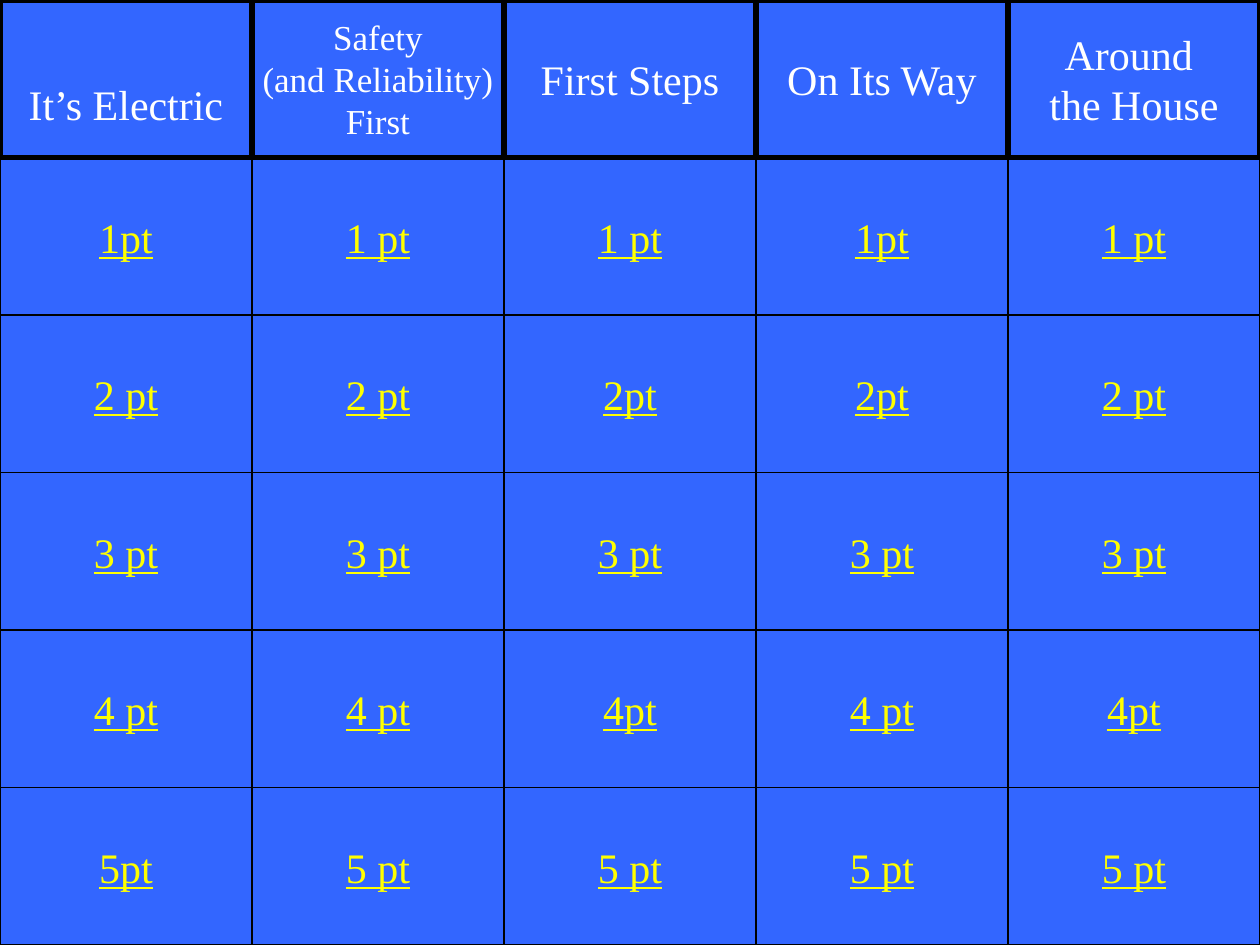
from pptx import Presentation
from pptx.dml.color import RGBColor
from pptx.enum.shapes import MSO_SHAPE
from pptx.enum.text import MSO_ANCHOR, PP_ALIGN
from pptx.util import Cm, Pt

BLUE = RGBColor(0x33, 0x66, 0xFF)
BLACK = RGBColor(0, 0, 0)
WHITE = RGBColor(0xFF, 0xFF, 0xFF)
YELLOW = RGBColor(0xFF, 0xFF, 0)
RECTANGLE = MSO_SHAPE.RECTANGLE
BUTTON = MSO_SHAPE.ACTION_BUTTON_CUSTOM
MIDDLE = MSO_ANCHOR.MIDDLE
CENTER = PP_ALIGN.CENTER

SLIDE_WIDTH, SLIDE_HEIGHT = 25.4, 19.05
BLANK_LAYOUT = 6

# Category text, text size, top inset in cm
CATEGORIES = [
    ("It’s Electric", 24, 1.14),
    ("Safety\n(and Reliability)\nFirst", 20, 0.13),
    ("First Steps", 24, 0.13),
    ("On Its Way", 24, 0.13),
    ("Around \nthe House", 24, 0.13),
]
POINTS = [
    ["1pt", "1 pt", "1 pt", "1pt", "1 pt"],
    ["2 pt", "2 pt", "2pt", "2pt", "2 pt"],
    ["3 pt", "3 pt", "3 pt", "3 pt", "3 pt"],
    ["4 pt", "4 pt", "4pt", "4 pt", "4pt"],
    ["5pt", "5 pt", "5 pt", "5 pt", "5 pt"],
]
CELL_WIDTH = SLIDE_WIDTH / len(CATEGORIES)
CELL_HEIGHT = SLIDE_HEIGHT / (len(POINTS) + 1)


class Board:
    font_name = "Times New Roman"

    def __init__(self, slide):
        self.slide = slide
        background = slide.background.fill
        background.solid()
        background.fore_color.rgb = BLUE

    def cell(self, kind, row, column, text, line_width, size, color, underline=False):
        box = self.slide.shapes.add_shape(
            kind, Cm(column * CELL_WIDTH), Cm(row * CELL_HEIGHT),
            Cm(CELL_WIDTH), Cm(CELL_HEIGHT))
        box.shadow.inherit = False
        box.fill.solid()
        box.fill.fore_color.rgb = BLUE
        box.line.color.rgb = BLACK
        box.line.width = Pt(line_width)
        frame = box.text_frame
        frame.word_wrap = False
        frame.vertical_anchor = MIDDLE
        frame.text = text
        for para in frame.paragraphs:
            para.alignment = CENTER
            for span in para.runs:
                span.font.name = self.font_name
                span.font.size = Pt(size)
                span.font.color.rgb = color
                span.font.underline = underline
        return box

    def points(self, row, column, text):
        self.cell(BUTTON, row, column, text, 0.75, 24, YELLOW, underline=True)

    def category(self, column, text, size, top_inset):
        box = self.cell(RECTANGLE, 0, column, text, 3, size, WHITE)
        box.text_frame.margin_top = Cm(top_inset)


def main():
    deck = Presentation()
    deck.slide_width = Cm(SLIDE_WIDTH)
    deck.slide_height = Cm(SLIDE_HEIGHT)
    board = Board(deck.slides.add_slide(deck.slide_layouts[BLANK_LAYOUT]))

    for row, labels in enumerate(POINTS, start=1):
        for column, label in enumerate(labels):
            board.points(row, column, label)
    for column, (text, size, top_inset) in enumerate(CATEGORIES):
        board.category(column, text, size, top_inset)

    deck.save("out.pptx")


if __name__ == "__main__":
    main()
